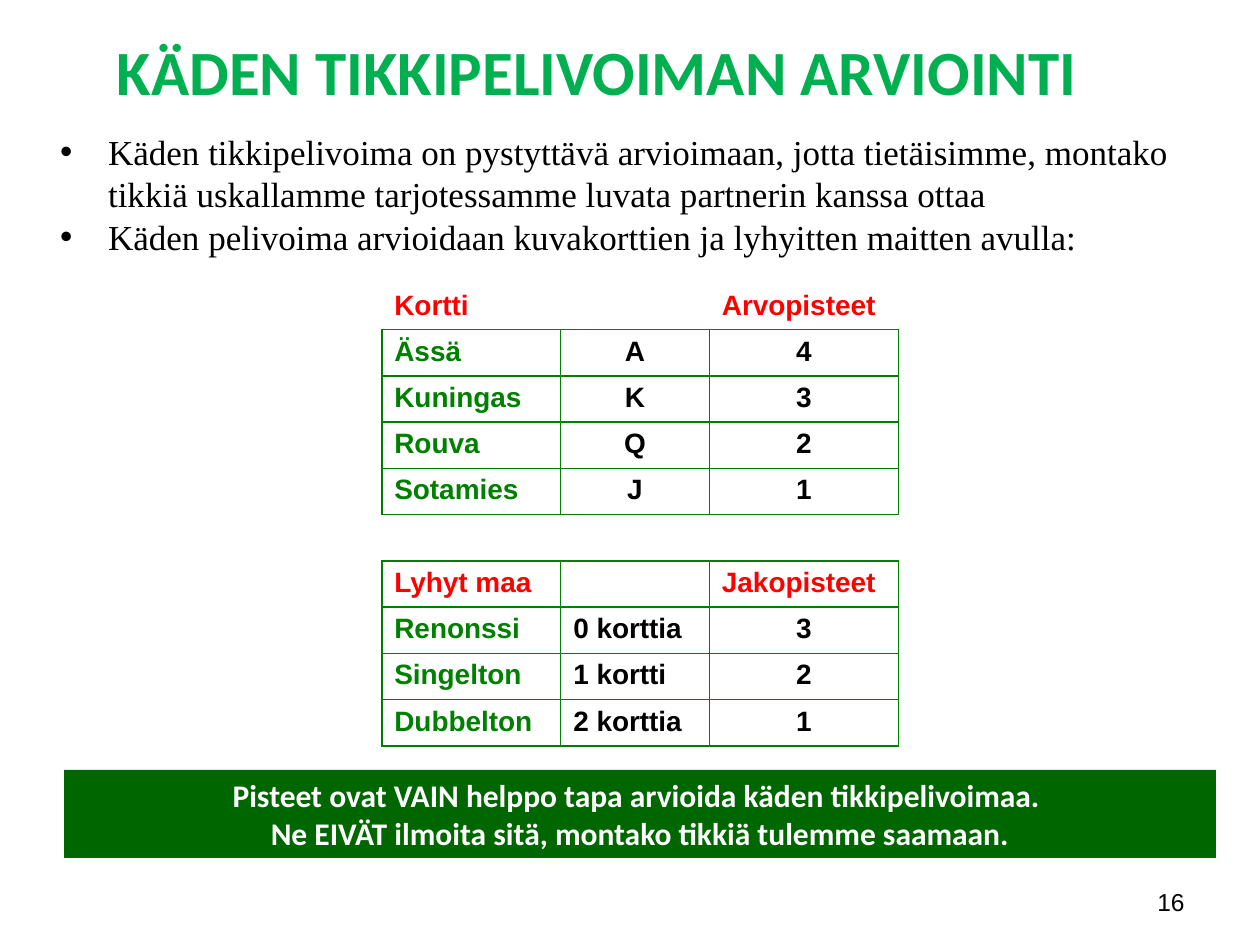
import pptx
import pptx.util
import pptx.dml.color
import pptx.enum.shapes
import pptx.enum.text
import pptx.oxml
import pptx.oxml.ns
from lxml import etree

Inches = pptx.util.Inches
Pt = pptx.util.Pt
RGBColor = pptx.dml.color.RGBColor
Align = pptx.enum.text.PP_ALIGN
qn = pptx.oxml.ns.qn

BLACK = RGBColor(0x00, 0x00, 0x00)
WHITE = RGBColor(0xFF, 0xFF, 0xFF)
RED = RGBColor(0xFF, 0x00, 0x00)
GREEN = RGBColor(0x00, 0x80, 0x00)
TITLE_GREEN = RGBColor(0x00, 0xB0, 0x50)
BANNER_GREEN = RGBColor(0x00, 0x66, 0x00)


class SlideBuilder:
    """Holds the style and the current slide."""

    body_font, heading_font, table_font = "Times New Roman", "Calibri", "Arial"
    table_size = 16
    bullet_indent = Inches(0.38)

    def __init__(self, slide):
        self.slide = slide

    def style(self, paragraph, font, size, color, bold=False, align=Align.LEFT):
        paragraph.alignment = align
        paragraph.font.name = font
        paragraph.font.size = Pt(size)
        paragraph.font.bold = bold
        paragraph.font.color.rgb = color

    def text(self, box, lines, font, size, color, bold=False, align=Align.LEFT, bullet=False):
        frame = self.slide.shapes.add_textbox(*map(Inches, box)).text_frame
        frame.word_wrap = True
        frame.text = "\n".join(lines)
        for paragraph in frame.paragraphs:
            self.style(paragraph, font, size, color, bold, align)
            if bullet:
                self.bullet(paragraph)

    def bullet(self, paragraph):
        properties = paragraph.font._element.getparent()
        properties.set("marL", str(self.bullet_indent))
        properties.set("indent", str(-self.bullet_indent))
        mark = etree.Element(qn("a:buChar"), char="•")
        typeface = etree.Element(qn("a:buFont"), typeface="Arial")
        properties.insert(0, typeface)
        properties.insert(1, mark)

    def banner(self, box, text):
        banner = self.slide.shapes.add_shape(
            pptx.enum.shapes.MSO_SHAPE.RECTANGLE, *map(Inches, box))
        banner.shadow.inherit = False
        banner.fill.solid()
        banner.fill.fore_color.rgb = BANNER_GREEN
        banner.line.fill.background()
        banner.text_frame.word_wrap = True
        paragraph = banner.text_frame.paragraphs[0]
        paragraph.text = text
        self.style(paragraph, self.heading_font, 18, WHITE, True, Align.CENTER)

    def borders(self, cell, sides):
        properties = cell._tc.get_or_add_tcPr()
        for side in "LRTB":
            line = etree.SubElement(properties, qn(f"a:ln{side}"), w=str(Pt(1)))
            if side in sides:
                fill = etree.SubElement(line, qn("a:solidFill"))
                etree.SubElement(fill, qn("a:srgbClr"), val=str(GREEN))
            else:
                etree.SubElement(line, qn("a:noFill"))

    def table(self, box, widths, rows, headers, open_rows):
        table = self.slide.shapes.add_table(
            len(rows), len(widths), *map(Inches, box)).table
        table.first_row = table.horz_banding = False
        for column, width in zip(table.columns, widths):
            column.width = Inches(width)
        for r, row in enumerate(rows):
            for c, value in enumerate(row):
                cell = table.cell(r, c)
                self.borders(cell, open_rows.get(r, "LRTB"))
                cell.fill.background()
                paragraph = cell.text_frame.paragraphs[0]
                paragraph.text = value
                color = RED if r in headers else GREEN if c == 0 else BLACK
                # Single letters and points are centred
                align = Align.CENTER if len(value) == 1 else Align.LEFT
                self.style(paragraph, self.table_font, self.table_size, color, True, align)


def main():
    deck = pptx.Presentation()
    deck.slide_width, deck.slide_height = Inches(10), Inches(7.5)
    page = SlideBuilder(deck.slides.add_slide(deck.slide_layouts[6]))

    # Introduction
    page.text((0.38, 0.99, 9.14, 1.11), [
        "Käden tikkipelivoima on pystyttävä arvioimaan, jotta tietäisimme, montako "
        "tikkiä uskallamme tarjotessamme luvata partnerin kanssa ottaa",
        "Käden pelivoima arvioidaan kuvakorttien ja lyhyitten maitten avulla:",
    ], page.body_font, 20, BLACK, bullet=True)

    # Honour points above, distribution points below an empty row
    points = [
        ("Kortti", "", "Arvopisteet"),
        ("Ässä", "A", "4"),
        ("Kuningas", "K", "3"),
        ("Rouva", "Q", "2"),
        ("Sotamies", "J", "1"),
        ("", "", ""),
        ("Lyhyt maa", "", "Jakopisteet"),
        ("Renonssi", "0 korttia", "3"),
        ("Singelton", "1 kortti", "2"),
        ("Dubbelton", "2 korttia", "1"),
    ]
    page.table((3.03, 2.25, 4.1, 3.67), (1.42, 1.18, 1.5), points,
               headers=(0, 6), open_rows={0: "B", 5: "TB"})

    # Reminder
    page.banner((0.51, 6.11, 9.14, 0.7),
                "Pisteet ovat VAIN helppo tapa arvioida käden tikkipelivoimaa. \n"
                "Ne EIVÄT ilmoita sitä, montako tikkiä tulemme saamaan.")

    # Title and page number
    page.text((0.83, 0.21, 8.5, 0.71), ["KÄDEN TIKKIPELIVOIMAN ARVIOINTI"],
              page.heading_font, 36, TITLE_GREEN, bold=True)
    page.text((7.17, 6.99, 2.33, 0.52), ["16"], page.table_font, 14, BLACK,
              align=Align.RIGHT)

    deck.save("out.pptx")


if __name__ == "__main__":
    main()
